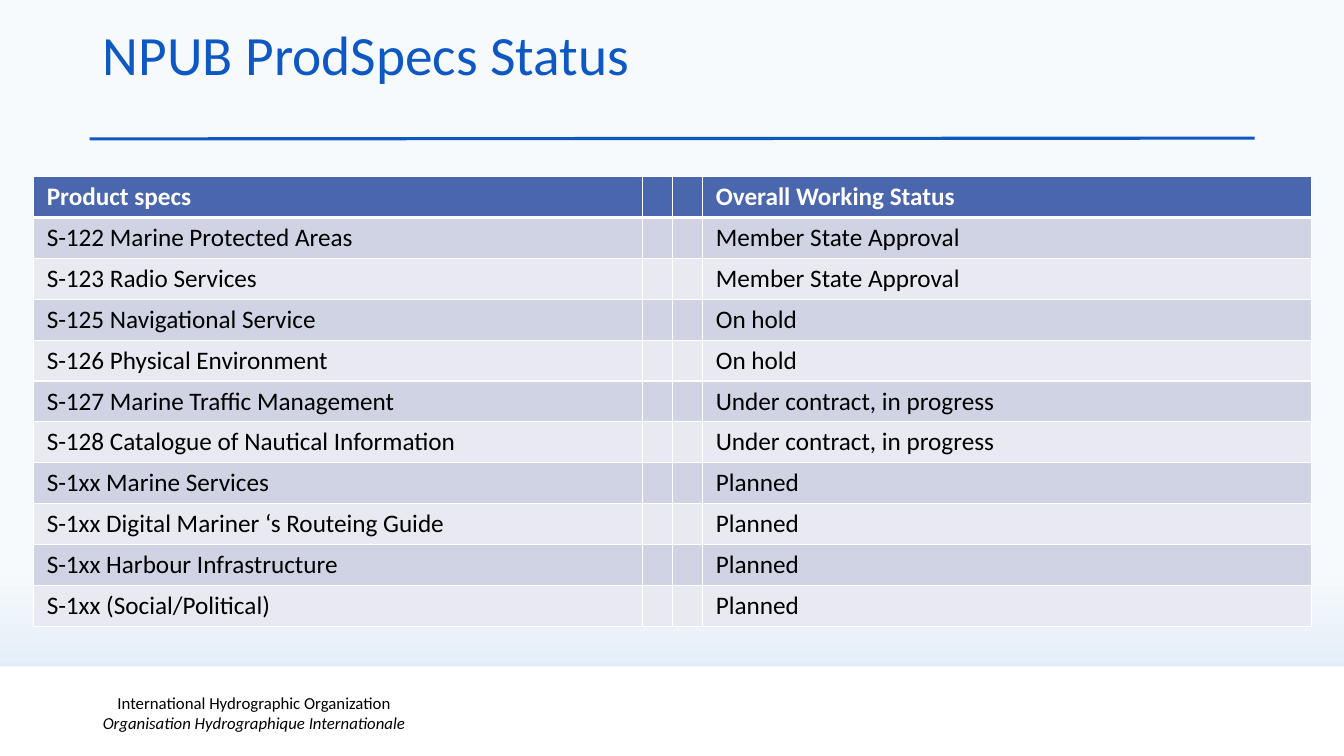
from typing import NamedTuple

from lxml import etree
from pptx import Presentation
from pptx.dml.color import RGBColor
from pptx.enum import shapes, text
from pptx.oxml import ns
from pptx.util import Cm, Pt

BLUE, WHITE, BLACK = "0E58C4", "FFFFFF", "000000"
HEADER_FILL = "4A66AC"
BAND_FILLS = ("D0D3E3", "E9EAF1")
COLUMN_WIDTHS = (15.34, 0.75, 0.75, 15.34)
ROW_HEIGHT = 1.03


class ProductSpec(NamedTuple):
    name: str
    status: str


HEADER = ProductSpec("Product specs", "Overall Working Status")
PRODUCT_SPECS = (
    ProductSpec("S-122 Marine Protected Areas", "Member State Approval"),
    ProductSpec("S-123 Radio Services", "Member State Approval"),
    ProductSpec("S-125 Navigational Service", "On hold"),
    ProductSpec("S-126 Physical Environment", "On hold"),
    ProductSpec("S-127 Marine Traffic Management", "Under contract, in progress"),
    ProductSpec("S-128 Catalogue of Nautical Information", "Under contract, in progress"),
    ProductSpec("S-1xx Marine Services", "Planned"),
    ProductSpec("S-1xx Digital Mariner ‘s Routeing Guide", "Planned"),
    ProductSpec("S-1xx Harbour Infrastructure", "Planned"),
    ProductSpec("S-1xx (Social/Political)", "Planned"),
)


def colour(value: str) -> RGBColor:
    return RGBColor.from_string(value)


def style_font(font, size: float, ink: str, bold: bool = False) -> None:
    font.name, font.size, font.bold = "Calibri", Pt(size), bold
    font.color.rgb = colour(ink)


def add_background(page) -> None:
    fill = page.background.fill
    fill.gradient()
    fill.gradient_angle = 270
    for stop, position, value in zip(fill.gradient_stops, (0.75, 1), ("F7FAFD", "D0E2F1")):
        stop.position = position
        stop.color.rgb = colour(value)


def add_rule(page) -> None:
    rule = page.shapes.add_connector(
        shapes.MSO_CONNECTOR.STRAIGHT, Cm(2.26), Cm(3.5), Cm(31.62), Cm(3.48))
    rule.line.color.rgb = colour(BLUE)
    rule.line.width = Pt(2.25)
    etree.SubElement(rule._element.spPr, ns.qn("a:effectLst"))


def add_footer(page) -> None:
    band = page.shapes.add_shape(
        shapes.MSO_SHAPE.RECTANGLE, 0, Cm(16.79), Cm(33.87), Cm(2.26))
    band.shadow.inherit = False
    band.fill.solid()
    band.fill.fore_color.rgb = colour(WHITE)
    band.line.fill.background()

    box = page.shapes.add_textbox(Cm(0.69), Cm(17.45), Cm(11.43), Cm(1.02))
    frame = box.text_frame
    frame.word_wrap = True
    frame.vertical_anchor = text.MSO_ANCHOR.MIDDLE
    para = frame.paragraphs[0]
    para.text = "International Hydrographic Organization\vOrganisation Hydrographique Internationale"
    para.alignment = text.PP_ALIGN.CENTER
    for span, italic in zip(para.runs, (False, True)):
        style_font(span.font, 12, BLACK)
        span.font.italic = italic


def add_title(page) -> None:
    title = page.shapes.title
    title.left, title.top, title.width, title.height = Cm(2.34), Cm(0.71), Cm(29.21), Cm(1.5)
    frame = title.text_frame
    frame.text = "NPUB ProdSpecs Status"
    frame.auto_size = text.MSO_AUTO_SIZE.NONE
    frame.vertical_anchor = text.MSO_ANCHOR.MIDDLE
    para = frame.paragraphs[0]
    para.alignment = text.PP_ALIGN.LEFT
    para.line_spacing = 0.9
    style_font(para.runs[0].font, 39.6, BLUE)


def set_borders(cell, bottom: float) -> None:
    properties = cell._tc.get_or_add_tcPr()
    for index, (side, width) in enumerate((("L", 1), ("R", 1), ("T", 1), ("B", bottom))):
        border = etree.Element(ns.qn(f"a:ln{side}"), w=str(Pt(width)))
        fill = etree.SubElement(border, ns.qn("a:solidFill"))
        etree.SubElement(fill, ns.qn("a:srgbClr"), val=WHITE)
        properties.insert(index, border)


def add_status_table(page) -> None:
    rows = (HEADER, *PRODUCT_SPECS)
    table = page.shapes.add_table(
        len(rows), len(COLUMN_WIDTHS), Cm(0.85), Cm(4.45),
        Cm(sum(COLUMN_WIDTHS)), Cm(ROW_HEIGHT * len(rows))).table
    for column, width in zip(table.columns, COLUMN_WIDTHS):
        column.width = Cm(width)
    for index, product in enumerate(rows):
        is_header = index == 0
        table.rows[index].height = Cm(ROW_HEIGHT)
        # The two narrow middle columns stay empty
        for cell, words in zip(table.rows[index].cells, (product.name, "", "", product.status)):
            cell.text = words
            cell.margin_left = cell.margin_right = Cm(0.33)
            cell.fill.solid()
            cell.fill.fore_color.rgb = colour(
                HEADER_FILL if is_header else BAND_FILLS[(index - 1) % 2])
            set_borders(cell, bottom=3 if is_header else 1)
            for span in cell.text_frame.paragraphs[0].runs:
                style_font(span.font, 18, WHITE if is_header else BLACK, bold=is_header)


def main() -> None:
    deck = Presentation()
    deck.slide_width, deck.slide_height = Cm(33.87), Cm(19.05)
    page = deck.slides.add_slide(deck.slide_layouts[5])
    # Frame of the page
    add_background(page)
    add_rule(page)
    add_footer(page)
    # Content
    add_title(page)
    add_status_table(page)
    deck.save("out.pptx")


if __name__ == "__main__":
    main()
